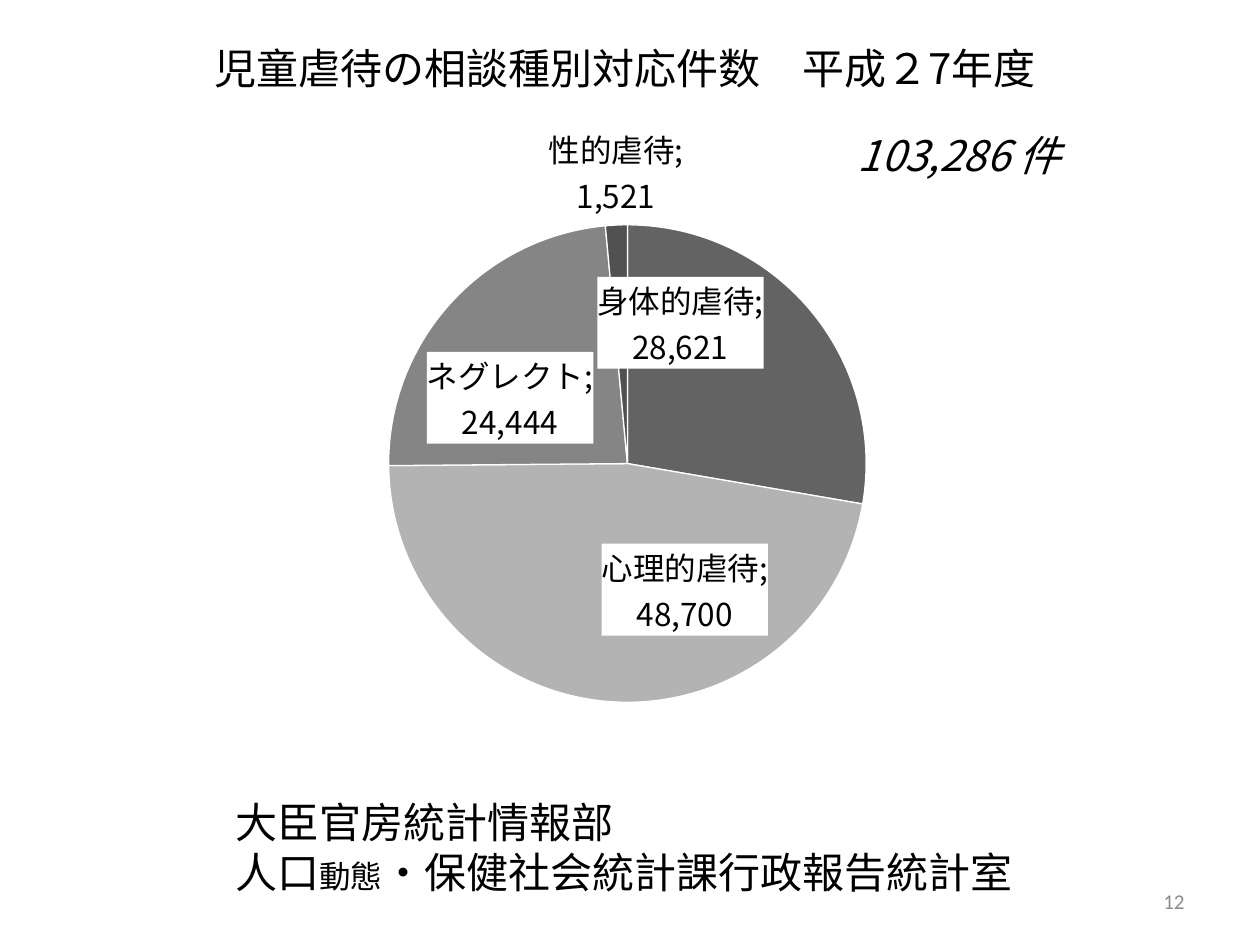
from lxml.etree import SubElement
from pptx import Presentation
from pptx.chart.data import CategoryChartData
from pptx.dml.color import RGBColor
from pptx.enum.chart import XL_CHART_TYPE as ChartType, XL_LABEL_POSITION as LabelPos
from pptx.enum.text import MSO_ANCHOR as Anchor, PP_ALIGN as Align
from pptx.oxml import parse_xml
from pptx.oxml.ns import nsdecls, qn
from pptx.util import Inches, Pt

# Content: each text block is a list of paragraphs of (text, style) runs
TITLE = [[("児童虐待の相談種別対応件数\u3000平成２7年度 ".replace("\u3000", "　"), "main")]]
TOTAL = [[("103,286 件", "total")]]
SOURCE = [
    [("大臣官房統計情報部", "main")],
    [("人口", "main"), ("動態", "small"), ("・保健社会統計課行政報告統計室", "main")],
]
PAGE = [[("12", "page")]]
# Category, cases, slice colour, label position, label offset (share of chart)
CASES = [
    ("身体的虐待", 28621, "636363", LabelPos.CENTER, (-0.04, -0.09)),
    ("心理的虐待", 48700, "B3B3B3", LabelPos.CENTER, (0.07, 0.01)),
    ("ネグレクト", 24444, "858585", LabelPos.CENTER, (-0.03, 0.02)),
    ("性的虐待", 1521, "515151", LabelPos.OUTSIDE_END, (0, 0)),
]
NUMBER_FORMAT = r"#,##0;[Red]\-#,##0"

CJK = "Noto Sans CJK JP"
THEME = {
    "main": {"name": CJK, "size": Pt(24), "color": "000000"},
    "small": {"name": CJK, "size": Pt(18), "color": "000000"},
    "total": {"name": CJK, "size": Pt(24), "color": "000000", "italic": True},
    "page": {"name": "Calibri", "size": Pt(12), "color": "8C8C8C"},
    "white": "FFFFFF",
}
CHART_BOX = (1.18, 0.86, 7.6, 5.64)
PIE_DIAMETER = 3.79


def style_font(font, style):
    for key, value in THEME[style].items():
        if key == "color":
            font.color.rgb = RGBColor.from_string(value)
        else:
            setattr(font, key, value)


def write(shape, box, paragraphs, align=Align.LEFT, anchor=Anchor.TOP, wrap=True):
    for side, value in zip(("left", "top", "width", "height"), box):
        setattr(shape, side, Inches(value))
    frame = shape.text_frame
    frame.word_wrap, frame.vertical_anchor = wrap, anchor
    for index, runs in enumerate(paragraphs):
        paragraph = frame.add_paragraph() if index else frame.paragraphs[0]
        paragraph.alignment = align
        for text, style in runs:
            run = paragraph.add_run()
            run.text = text
            style_font(run.font, style)
            east_asian = SubElement(run.font._element, qn("a:ea"))
            east_asian.set("typeface", THEME[style]["name"])


def manual_layout(**values):
    inner = "".join(f'<c:{key} val="{value}"/>' for key, value in values.items())
    return parse_xml(f'<c:layout {nsdecls("c")}><c:manualLayout>{inner}'
                     '</c:manualLayout></c:layout>')


def style_label(point, position, offset):
    label = point.data_label
    style_font(label.font, "small")
    label.position = position
    element = label._dLbl
    text_style = element.find(qn("c:txPr"))
    # Manual offset, number format and white box come before the text style
    if any(offset):
        text_style.addprevious(manual_layout(x=offset[0], y=offset[1]))
    number_format = parse_xml(f'<c:numFmt {nsdecls("c")} sourceLinked="0"/>')
    number_format.set("formatCode", NUMBER_FORMAT)
    text_style.addprevious(number_format)
    text_style.addprevious(parse_xml(
        f'<c:spPr {nsdecls("c", "a")}><a:solidFill>'
        f'<a:srgbClr val="{THEME["white"]}"/></a:solidFill></c:spPr>'))
    element.find(qn("c:showCatName")).set("val", "1")
    SubElement(element, qn("c:separator")).text = "; "


def add_pie(slide):
    data = CategoryChartData(number_format="#,##0")
    data.categories = [case[0] for case in CASES]
    data.add_series("Series 1", [case[1] for case in CASES])
    chart = slide.shapes.add_chart(ChartType.PIE, *map(Inches, CHART_BOX), data).chart
    chart.has_legend = chart.has_title = False
    style_font(chart.font, "small")
    chart.font.name = "Calibri"
    plot = chart.plots[0]
    plot.vary_by_categories = True

    # Centre the pie in the chart
    width, height = (round(PIE_DIAMETER / side, 3) for side in CHART_BOX[2:])
    area = chart._chartSpace.chart.plotArea
    for old in area.findall(qn("c:layout")):
        area.remove(old)
    area.insert(0, manual_layout(layoutTarget="inner", xMode="edge", yMode="edge",
                                 x=(1 - width) / 2, y=(1 - height) / 2,
                                 w=width, h=height))

    for index, (_, _, color, position, offset) in enumerate(CASES):
        point = plot.series[0].points[index]
        point.format.fill.solid()
        point.format.fill.fore_color.rgb = RGBColor.from_string(color)
        point.format.line.color.rgb = RGBColor.from_string(THEME["white"])
        point.format.line.width = Pt(0.75)
        style_label(point, position, offset)


def main():
    deck = Presentation()
    deck.slide_width, deck.slide_height = Inches(10), Inches(7.5)
    slide = deck.slides.add_slide(deck.slide_layouts[5])

    def text_box():
        return slide.shapes.add_textbox(0, 0, 0, 0)

    # Title, pie, total, source and page number
    write(slide.shapes.title, (0.5, 0.15, 9, 0.78), TITLE, Align.CENTER, Anchor.MIDDLE)
    add_pie(slide)
    write(text_box(), (6.71, 0.98, 2.49, 0.5), TOTAL, wrap=False)
    write(text_box(), (1.77, 6.27, 7.1, 0.91), SOURCE)
    write(text_box(), (7.17, 6.95, 2.33, 0.4), PAGE, Align.RIGHT, Anchor.MIDDLE)
    deck.save("out.pptx")


if __name__ == "__main__":
    main()
